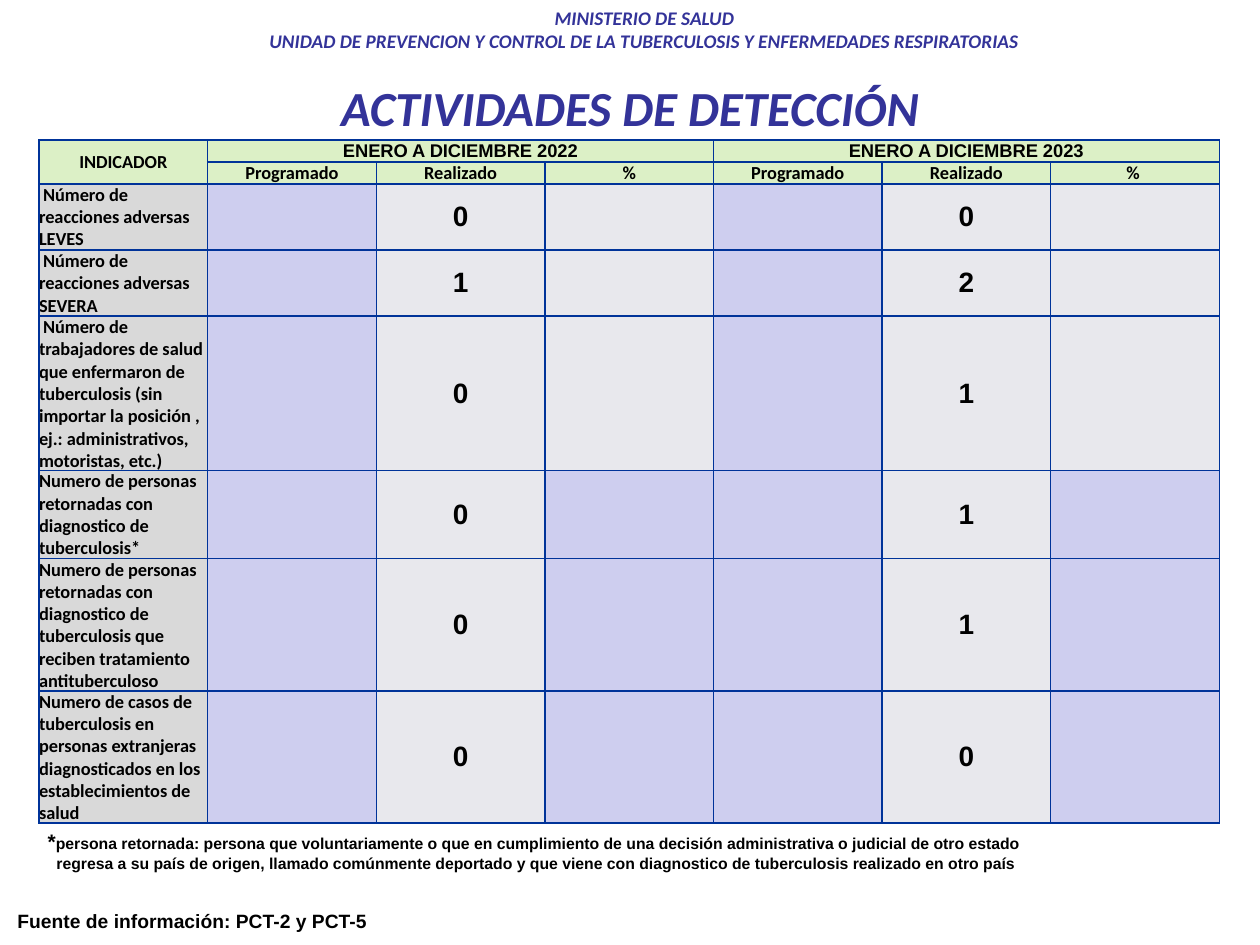
"""Build the tuberculosis detection activities slide."""
from dataclasses import dataclass

from lxml import etree
from pptx import Presentation
from pptx.dml.color import RGBColor
from pptx.enum.text import MSO_ANCHOR, PP_ALIGN
from pptx.oxml.ns import qn
from pptx.util import Inches, Pt

LEFT, CENTER = PP_ALIGN.LEFT, PP_ALIGN.CENTER
TOP, MIDDLE = MSO_ANCHOR.TOP, MSO_ANCHOR.MIDDLE


@dataclass(frozen=True)
class Theme:
    heading: str = "Calibri"
    body: str = "Arial"
    title_color: str = "333399"
    text_color: str = "000000"
    border: str = "003399"
    header_fill: str = "DCF0C6"
    label_fill: str = "D9D9D9"
    blocked_fill: str = "CECEEF"
    value_fill: str = "E8E8ED"
    title_size: float = 28
    value_size: float = 16
    mark_size: float = 12
    small_size: float = 11
    cell_size: float = 10.5
    note_size: float = 9
    border_width: float = 1


@dataclass(frozen=True)
class Style:
    font: str
    size: float
    color: str
    italic: bool = False


@dataclass(frozen=True)
class Indicator:
    label: str
    lines: int
    done_2022: str
    done_2023: str
    has_percent: bool


T = Theme()
BANNER = Style(T.heading, T.small_size, T.title_color, True)
TITLE = Style(T.heading, T.title_size, T.title_color, True)
CELL = Style(T.heading, T.cell_size, T.text_color)
PERIOD = Style(T.body, T.cell_size, T.text_color)
VALUE = Style(T.body, T.value_size, T.text_color)
SOURCE = Style(T.body, T.small_size, T.text_color)
MARK = Style(T.body, T.mark_size, T.text_color)
NOTE = Style(T.body, T.note_size, T.text_color)

PERIODS = ("ENERO A DICIEMBRE 2022", "ENERO A DICIEMBRE 2023")
MEASURES = ("Programado", "Realizado", "%", "Programado", "Realizado", "% ")
INDICATORS = (
    Indicator(" Número de reacciones adversas LEVES", 3, "0", "0", True),
    Indicator(" Número de reacciones adversas SEVERA", 3, "1", "2", True),
    Indicator(" Número de trabajadores de salud que enfermaron de tuberculosis "
              "(sin importar la posición , ej.: administrativos, motoristas, etc.)",
              7, "0", "1", True),
    Indicator("Numero de personas retornadas con diagnostico de tuberculosis*",
              4, "0", "1", False),
    Indicator("Numero de personas retornadas con diagnostico de tuberculosis que "
              "reciben tratamiento antituberculoso", 6, "0", "1", False),
    Indicator("Numero de casos de tuberculosis en personas extranjeras "
              "diagnosticados en los establecimientos de salud", 6, "0", "0", False),
)


def add_run(p, text: str, style: Style) -> None:
    r = p.add_run()
    r.text = text
    r.font.name = style.font
    r.font.size = Pt(style.size)
    r.font.bold = True
    r.font.italic = style.italic
    r.font.color.rgb = RGBColor.from_string(style.color)


def add_box(s, left: float, top: float, width: float, height: float,
            align=LEFT, anchor=TOP):
    tf = s.shapes.add_textbox(Inches(left), Inches(top),
                              Inches(width), Inches(height)).text_frame
    tf.word_wrap = True
    tf.vertical_anchor = anchor
    tf.paragraphs[0].alignment = align
    return tf


def add_borders(cell) -> None:
    tc_pr = cell._tc.get_or_add_tcPr()
    for side in ("a:lnL", "a:lnR", "a:lnT", "a:lnB"):
        ln = etree.SubElement(tc_pr, qn(side), w=str(Pt(T.border_width)))
        fill = etree.SubElement(ln, qn("a:solidFill"))
        etree.SubElement(fill, qn("a:srgbClr"), val=T.border)


def fill_cell(cell, color: str, text: str = "", style: Style = CELL,
              align=CENTER) -> None:
    cell.margin_left = cell.margin_right = 0
    cell.margin_top = cell.margin_bottom = 0
    cell.vertical_anchor = MIDDLE
    add_borders(cell)
    cell.fill.solid()
    cell.fill.fore_color.rgb = RGBColor.from_string(color)
    if text:
        p = cell.text_frame.paragraphs[0]
        p.alignment = align
        add_run(p, text, style)


def add_indicator_table(s) -> None:
    width, height = 9.37, 5.42
    lines = [1, 1] + [i.lines for i in INDICATORS]
    table = s.shapes.add_table(len(lines), 7, Inches(0.31), Inches(1.11),
                               Inches(width), Inches(height)).table
    for column in table.columns:
        column.width = Inches(width / 7)
    for row, count in zip(table.rows, lines):
        row.height = Inches(height * count / sum(lines))

    header = ["INDICADOR", PERIODS[0], "", "", PERIODS[1], "", ""]
    for col, text in enumerate(header):
        fill_cell(table.cell(0, col), T.header_fill, text, PERIOD if col else CELL)
    for col, text in enumerate(("",) + MEASURES):
        fill_cell(table.cell(1, col), T.header_fill, text)
    table.cell(0, 0).merge(table.cell(1, 0))
    for col in (1, 4):
        table.cell(0, col).merge(table.cell(0, col + 2))

    for row, item in enumerate(INDICATORS, start=2):
        fill_cell(table.cell(row, 0), T.label_fill, item.label, align=LEFT)
        percent_fill = T.value_fill if item.has_percent else T.blocked_fill
        for col, done in ((1, item.done_2022), (4, item.done_2023)):
            fill_cell(table.cell(row, col), T.blocked_fill)
            fill_cell(table.cell(row, col + 1), T.value_fill, done, VALUE)
            fill_cell(table.cell(row, col + 2), percent_fill)


def add_footnote(s) -> None:
    tf = add_box(s, 0.28, 6.53, 9.37, 0.47)
    p = tf.paragraphs[0]
    add_run(p, "*", MARK)
    add_run(p, "persona retornada: persona que voluntariamente o que en cumplimiento "
               "de una decisión administrativa o judicial de otro estado", NOTE)
    p = tf.add_paragraph()
    p._p.get_or_add_pPr().set("marL", str(Inches(0.07)))
    add_run(p, "regresa a su país de origen, llamado comúnmente deportado y que viene "
               "con diagnostico de tuberculosis realizado en otro país", NOTE)


def main() -> None:
    prs = Presentation()
    prs.slide_width, prs.slide_height = Inches(10), Inches(7.5)
    s = prs.slides.add_slide(prs.slide_layouts[6])

    p = add_box(s, 1.53, 0, 7.17, 0.66, CENTER).paragraphs[0]
    add_run(p, "MINISTERIO DE SALUD", BANNER)
    p.add_line_break()
    add_run(p, "UNIDAD DE PREVENCION Y CONTROL DE LA TUBERCULOSIS Y "
               "ENFERMEDADES RESPIRATORIAS", BANNER)

    p = add_box(s, 0.5, 0.5, 9, 0.69, CENTER, MIDDLE).paragraphs[0]
    add_run(p, "ACTIVIDADES DE DETECCIÓN", TITLE)

    p = add_box(s, 0.04, 7.17, 3.7, 0.29).paragraphs[0]
    add_run(p, "Fuente de información: PCT-2 y PCT-5", SOURCE)

    add_footnote(s)
    add_indicator_table(s)
    prs.save("out.pptx")


if __name__ == "__main__":
    main()
